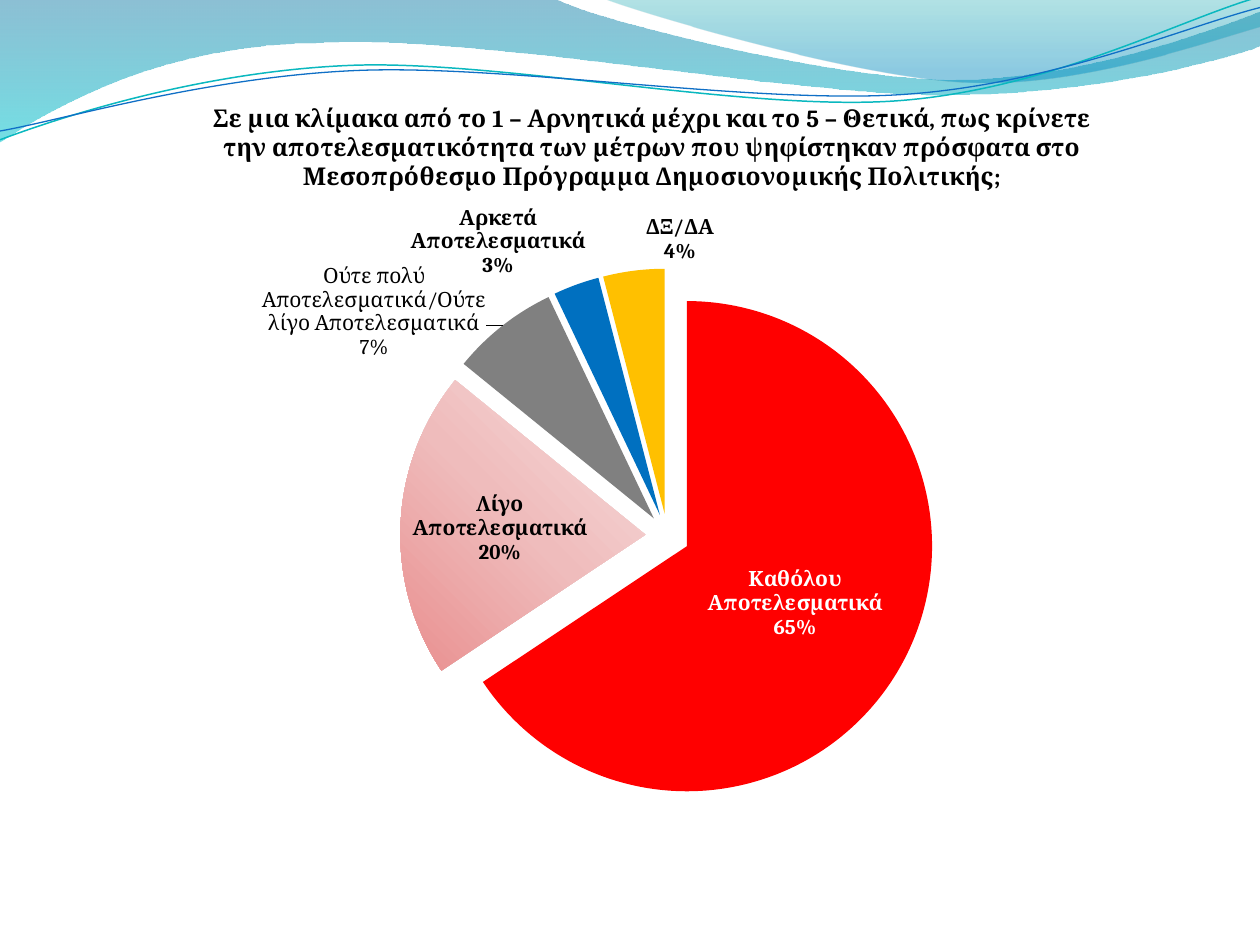
from lxml import etree
from pptx import Presentation
from pptx import util as u
from pptx.chart.data import CategoryChartData
from pptx.dml.color import RGBColor
from pptx.enum import chart as charts
from pptx.oxml import parse_xml
from pptx.oxml.ns import nsdecls, qn

COLUMNS, ROWS = 10, 7.5
DOWN = '<a:lin ang="5400000" scaled="0"/>'
FROM_CORNER = '<a:path path="circle"><a:fillToRect t="100000" r="100000"/></a:path>'


def color(code):
    return RGBColor.from_string(code)


def set_gradient(properties, stops, direction):
    """Replace a solid fill by a gradient of (position, colour, opacity)."""
    marks = "".join(
        f'<a:gs pos="{place * 1000}"><a:srgbClr val="{code}">'
        f'<a:alpha val="{opacity * 1000}"/></a:srgbClr></a:gs>'
        for place, code, opacity in stops)
    properties.replace(properties.find(qn("a:solidFill")), parse_xml(
        f'<a:gradFill {nsdecls("a")} rotWithShape="1">'
        f'<a:gsLst>{marks}</a:gsLst>{direction}</a:gradFill>'))


def manual_layout(x, y, width=None, height=None):
    """Layout in shares of the chart; an inner plot area if sized."""
    parts = []
    if width:
        parts += [("layoutTarget", "inner")]
    if width or x > 0.1:
        parts += [("xMode", "edge"), ("yMode", "edge")]
    parts += [("x", x), ("y", y)]
    if width:
        parts += [("w", width), ("h", height)]
    body = "".join(f'<c:{name} val="{value}"/>' for name, value in parts)
    return parse_xml(f'<c:layout {nsdecls("c")}><c:manualLayout>{body}'
                     '</c:manualLayout></c:layout>')


class SlideBuilder:
    font = "Cambria"

    def __init__(self, deck):
        deck.slide_width, deck.slide_height = u.Inches(COLUMNS), u.Inches(ROWS)
        self.page = deck.slides.add_slide(deck.slide_layouts[6])

    def curve(self, start, steps, closed):
        """Outline whose steps hold one point (line) or three (Bezier)."""
        def place(point):
            return tuple(u.Inches(value) for value in point)

        builder = self.page.shapes.build_freeform(*place(start))
        builder.add_line_segments(
            [place(point) for step in steps for point in step], close=closed)
        shape = builder.convert_to_shape()
        shape.shadow.inherit = False
        segments = iter(shape._element.xpath(".//a:path/a:lnTo"))
        for step in steps:
            first = next(segments)
            if len(step) == 3:
                first.tag = qn("a:cubicBezTo")
                for _ in range(2):
                    extra = next(segments)
                    first.append(extra[0])
                    extra.getparent().remove(extra)
        return shape

    def wave(self, start, steps, stops):
        shape = self.curve(start, steps, True)
        shape.line.fill.background()
        shape.fill.solid()
        set_gradient(shape._element.spPr, stops, DOWN)

    def strand(self, start, steps, code, width):
        shape = self.curve(start, steps, False)
        shape.fill.background()
        shape.line.color.rgb = color(code)
        shape.line.width = u.Pt(width)

    def style(self, font, size, bold, code="000000"):
        font.name, font.size, font.bold = self.font, u.Pt(size), bold
        font.color.rgb = color(code)

    def add_lines(self, frame, lines, size, bold, code="000000"):
        for number, line in enumerate(lines):
            para = frame.add_paragraph() if number else frame.paragraphs[0]
            span = para.add_run()
            span.text = line
            self.style(span.font, size, bold, code)

    def pie(self, area, title, slices, plot_area, explosion):
        data = CategoryChartData(number_format="0")
        data.categories = [part["name"] for part in slices]
        data.add_series("Series 1", [part["value"] for part in slices])
        chart = self.page.shapes.add_chart(
            charts.XL_CHART_TYPE.PIE, *[u.Inches(v) for v in area], data).chart
        self.style(chart.font, 10, False)
        chart.has_legend = False

        # Title and plot area
        chart.has_title = True
        self.add_lines(chart.chart_title.text_frame, [title], 14, True)
        heading = chart.chart_title._element
        for old in heading.findall(qn("c:layout")):
            heading.remove(old)
        heading.find(qn("c:tx")).addnext(manual_layout(0.12, 0.036))
        plot = chart._chartSpace.chart.plotArea
        for old in plot.findall(qn("c:layout")):
            plot.remove(old)
        plot.insert(0, manual_layout(*plot_area))

        # Common label settings
        chart.plots[0].vary_by_categories = True
        series = chart.plots[0].series[0]
        labels = series.data_labels
        labels.show_value = False
        labels.show_category_name = labels.show_percentage = True
        labels.number_format, labels.number_format_is_linked = "0%", False
        self.style(labels.font, 12, True)

        for number, part in enumerate(slices):
            self.pie_slice(series, number, part)
        burst = parse_xml(f'<c:explosion {nsdecls("c")} val="{explosion}"/>')
        series._element.find(qn("c:dPt")).addprevious(burst)

    def pie_slice(self, series, number, part):
        point = series.points[number]
        point.format.fill.solid()
        if "stops" in part:
            properties = series._element.xpath(
                f'c:dPt[c:idx/@val="{number}"]/c:spPr')[0]
            set_gradient(properties, part["stops"], FROM_CORNER)
        else:
            point.format.fill.fore_color.rgb = color(part["fill"])

        label = point.data_label
        look = (12, part.get("bold", True), part.get("ink", "000000"))
        if "lines" in part:
            self.add_lines(label.text_frame, part["lines"], *look)
        else:
            self.style(label.font, *look)
        places = charts.XL_LABEL_POSITION
        label.position = places.CENTER if part.get("inside") else places.OUTSIDE_END

        # Category and percentage on two lines, moved by a share of the chart
        node = series._element.xpath(f'c:dLbls/c:dLbl[c:idx/@val="{number}"]')[0]
        for name, value in (("showVal", 0), ("showCatName", 1), ("showPercent", 1)):
            node.find(qn(f"c:{name}")).set("val", str(value))
        etree.SubElement(node, qn("c:separator")).text = "\n"
        if "lines" not in part:
            node.insert(1, parse_xml(
                f'<c:numFmt {nsdecls("c")} formatCode="0%" sourceLinked="0"/>'))
        if "shift" in part:
            node.insert(1, manual_layout(*part["shift"]))


def main():
    deck = Presentation()
    builder = SlideBuilder(deck)

    # Header waves
    builder.wave((0, -0.01), [
        [(4.4, -0.01)],
        [(4.76, 0.17), (6.64, 0.63), (7.58, 0.63)],
        [(8.53, 0.63), (9.58, 0.26), (10, 0.09)],
        [(10.01, 0.36)],
        [(9.83, 0.44), (8.7, 0.76), (7.46, 0.75)],
        [(6.22, 0.75), (3.82, 0.28), (2.57, 0.34)],
        [(1.29, 0.35), (0.46, 0.83), (-0.01, 1.13)],
    ], [(0, "0074A1", 45), (100, "00C6CF", 55)])
    builder.wave((4.79, -0.01), [
        [(5.09, 0.11), (6.82, 0.62), (7.69, 0.65)],
        [(8.56, 0.69), (9.61, 0.32), (10, 0.21)],
        [(10, 0)],
    ], [(0, "00A1A9", 30), (80, "008BBF", 45)])

    # Thin strands
    builder.strand((0, 1.11), [
        [(0.48, 0.93), (1.58, 0.57), (2.77, 0.52)],
        [(3.95, 0.47), (5.93, 0.89), (7.13, 0.8)],
        [(8.33, 0.71), (9.38, 0.15), (9.98, -0.02)],
    ], "0AB8BF", 0.85)
    builder.strand((0, 1.04), [
        [(0.47, 0.96), (1.64, 0.61), (2.83, 0.56)],
        [(4.03, 0.51), (5.97, 0.83), (7.17, 0.75)],
        [(8.36, 0.67), (9.41, 0.21), (10, 0.06)],
    ], "0F6FC6", 0.75)

    # Survey answers
    builder.pie(
        (0.55, 0.55, 9.22, 6.33),
        "Σε μια κλίμακα από το 1 – Αρνητικά μέχρι και το 5 – Θετικά, πως κρίνετε "
        "την αποτελεσματικότητα των μέτρων που ψηφίστηκαν πρόσφατα στο "
        "Μεσοπρόθεσμο Πρόγραμμα Δημοσιονομικής Πολιτικής;",
        [
            dict(name="Καθόλου Αποτελεσματικά", value=65, fill="FF0000",
                 ink="FFFFFF", inside=True, lines=["Καθόλου Αποτελεσματικά", "65%"]),
            dict(name="Λίγο Αποτελεσματικά", value=20, inside=True, shift=(-0.02, 0),
                 stops=[(0, "E98F8F", 100), (50, "EFBCBC", 100), (100, "F7DEDE", 100)]),
            dict(name="Ούτε πολύ Αποτελεσματικά/Ούτε λίγο Αποτελεσμτικά", value=7,
                 fill="808080", bold=False, shift=(-0.01, 0.05),
                 lines=["Ούτε πολύ Αποτελεσματικά/Ούτε λίγο Αποτελεσματικά", "7%"]),
            dict(name="Αρκετά Αποτελεσματικά", value=3, fill="0070C0", shift=(0.01, 0)),
            dict(name="ΔΞ/ΔΑ", value=4, fill="FFC000", shift=(0.07, 0)),
        ],
        plot_area=(0.28, 0.25, 0.47, 0.67), explosion=9)

    deck.save("out.pptx")


if __name__ == "__main__":
    main()
